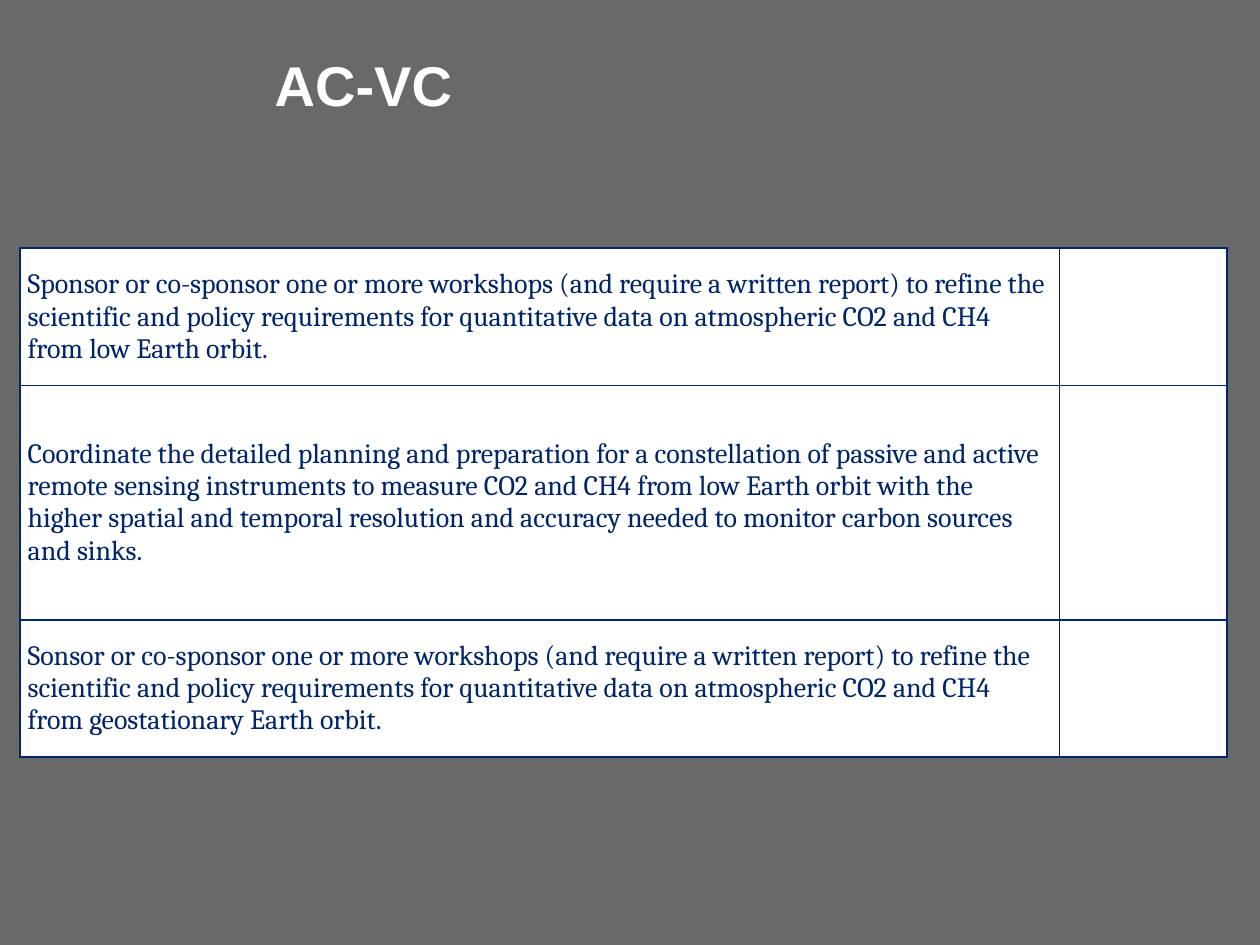
import pptx
import pptx.util
import pptx.dml.color
import pptx.enum.text
import pptx.oxml
from pptx.util import Inches

COLORS = {"background": "696969", "title": "FFFFFF", "cell": "FFFFFF", "navy": "002569"}
TITLE_FONT = {"name": "Arial", "size": pptx.util.Pt(32), "bold": True}
CELL_FONT = {"name": "Cambria", "size": pptx.util.Pt(16), "bold": False}
MIDDLE = pptx.enum.text.MSO_ANCHOR.MIDDLE
MARGINS = ("margin_left", "margin_top", "margin_right", "margin_bottom")
DRAWING_NS = "http://schemas.openxmlformats.org/drawingml/2006/main"


def format_font(font, values, color):
    for name, value in values.items():
        setattr(font, name, value)
    font.color.rgb = pptx.dml.color.RGBColor.from_string(COLORS[color])


def fill_solid(fill, color):
    fill.solid()
    fill.fore_color.rgb = pptx.dml.color.RGBColor.from_string(COLORS[color])


# Deck and slide
deck = pptx.Presentation()
deck.slide_width, deck.slide_height = Inches(10), Inches(7.5)
page = deck.slides.add_slide(deck.slide_layouts[5])
fill_solid(page.background.fill, "background")

# Title
title = page.shapes.title
title.left, title.top = Inches(2.08), Inches(0.35)
title.width, title.height = Inches(6.08), Inches(1.15)
frame = title.text_frame
frame.text = "AC-VC"
frame.vertical_anchor = pptx.enum.text.MSO_ANCHOR.TOP
para = frame.paragraphs[0]
para.alignment = pptx.enum.text.PP_ALIGN.LEFT
format_font(para.runs[0].font, TITLE_FONT, "title")

# Actions table: text column and an empty column
actions = [
    "Sponsor or co-sponsor one or more workshops (and require a written report) to refine "
    "the scientific and policy requirements for quantitative data on atmospheric CO2 and CH4 "
    "from low Earth orbit.",
    "Coordinate the detailed planning and preparation for a constellation of passive and "
    "active remote sensing instruments to measure CO2 and CH4 from low Earth orbit with the "
    "higher spatial and temporal resolution and accuracy needed to monitor carbon sources "
    "and sinks.",
    "Sonsor or co-sponsor one or more workshops (and require a written report) to refine "
    "the scientific and policy requirements for quantitative data on atmospheric CO2 and CH4 "
    "from geostationary Earth orbit.",
]
table = page.shapes.add_table(
    len(actions), 2, Inches(0.16), Inches(1.97), Inches(9.59), Inches(4.03)
).table
table.first_row = table.horz_banding = False
for column, width in zip(table.columns, (8.25, 1.33)):
    column.width = Inches(width)
for row, height, action in zip(table.rows, (1.09, 1.86, 1.09), actions):
    row.height = Inches(height)
    row.cells[0].text = action
    format_font(row.cells[0].text_frame.paragraphs[0].runs[0].font, CELL_FONT, "navy")

# Cell margins, borders and fill
for cell in table.iter_cells():
    cell.vertical_anchor = MIDDLE
    for margin in MARGINS:
        setattr(cell, margin, Inches(0.06))
    properties = cell._tc.get_or_add_tcPr()
    for side in ("lnL", "lnR", "lnT", "lnB"):
        properties.append(pptx.oxml.parse_xml(
            f'<a:{side} xmlns:a="{DRAWING_NS}" w="{pptx.util.Pt(1)}"><a:solidFill>'
            f'<a:srgbClr val="{COLORS["navy"]}"/></a:solidFill></a:{side}>'
        ))
    fill_solid(cell.fill, "cell")

deck.save("out.pptx")
